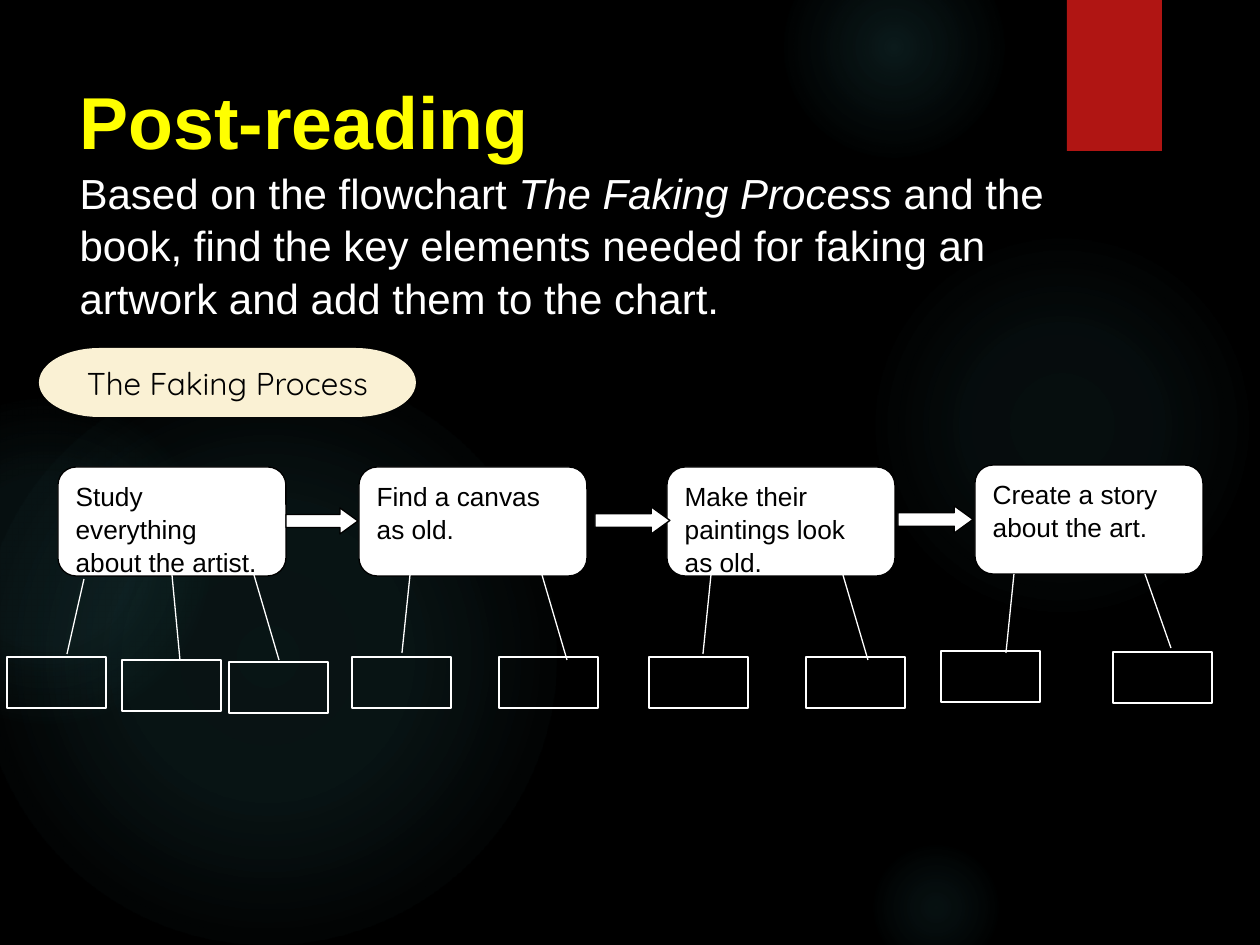
import pptx
import pptx.util
import pptx.dml.color
import pptx.enum.shapes
import pptx.enum.text
import pptx.oxml
import pptx.oxml.ns

RGB = pptx.dml.color.RGBColor
KIND = pptx.enum.shapes.MSO_SHAPE
ALIGN = pptx.enum.text.PP_ALIGN
ANCHOR = pptx.enum.text.MSO_ANCHOR
PX = 914400 / 126

BLACK = RGB(0x00, 0x00, 0x00)
WHITE = RGB(0xFF, 0xFF, 0xFF)
YELLOW = RGB(0xFF, 0xFF, 0x00)
CREAM = RGB(0xFA, 0xF1, 0xD4)
RED = RGB(0xB0, 0x15, 0x13)
TEAL = RGB(0x50, 0xB9, 0xC1)

HEAD = "Post-reading"
TASK = [
    ("Based on the flowchart ", False),
    ("The Faking Process ", True),
    ("and the book, find the key elements needed for faking an ", False),
    ("\n", False),
    ("artwork and add them to the chart.", False),
]
LABEL = "The Faking Process"

# left, top, size, (stop %, alpha %)
GLOWS = [
    (868, 231, 388, [(0, 7), (36, 6), (69, 0)]),
    (784, -63, 220, [(0, 14), (36, 7), (73, 0)]),
    (868, 840, 136, [(0, 9), (36, 5), (66, 0)]),
    (-21, 368, 577, [(0, 11), (36, 10), (75, 0)]),
    (-116, 399, 325, [(0, 8), (36, 8), (72, 0)]),
]
STEPS = [
    ("Study everything about the artist.", 58, 467),
    ("Find a canvas as old.", 359, 467),
    ("Make their paintings look as old.", 667, 467),
    ("Create a story about the art.", 975, 465),
]
ARROWS = [(286, 508, 72, 26), (595, 507, 75, 27), (898, 506, 75, 27)]
LINKS = [
    (84, 579, 67, 654), (172, 575, 180, 660), (254, 575, 279, 660),
    (410, 575, 402, 653), (542, 575, 567, 660), (711, 575, 703, 654),
    (843, 575, 868, 660), (1014, 574, 1006, 653), (1145, 574, 1171, 648),
]
SLOTS = [
    (7, 657), (122, 660), (229, 662), (352, 657), (499, 657),
    (649, 657), (806, 657), (941, 651), (1113, 652),
]


def emu(*nums):
    return [round(n * PX) for n in nums]


def draw(slide, kind, box, fill=None, line=None):
    shape = slide.shapes.add_shape(kind, *emu(*box))
    shape.shadow.inherit = False
    if fill is None:
        shape.fill.background()
    else:
        shape.fill.solid()
        shape.fill.fore_color.rgb = fill
    if line is None:
        shape.line.fill.background()
    else:
        shape.line.color.rgb = line
        shape.line.width = pptx.util.Pt(0.75)
    return shape


def glow(shape, stops):
    marks = "".join(
        f'<a:gs pos="{pos * 1000}"><a:srgbClr val="{TEAL}">'
        f'<a:alpha val="{alpha * 1000}"/></a:srgbClr></a:gs>'
        for pos, alpha in stops
    )
    grad = pptx.oxml.parse_xml(
        f'<a:gradFill {pptx.oxml.ns.nsdecls("a")}><a:gsLst>{marks}</a:gsLst>'
        '<a:path path="circle"><a:fillToRect l="50000" t="50000" '
        'r="50000" b="50000"/></a:path></a:gradFill>'
    )
    props = shape.element.spPr
    props.replace(props.find(pptx.oxml.ns.qn("a:noFill")), grad)


def style(font, name, size, color):
    font.name = name
    font.size = pptx.util.Pt(size)
    font.color.rgb = color


def write(shape, text, name, size, align, anchor):
    frame = shape.text_frame
    frame.word_wrap = True
    frame.vertical_anchor = anchor
    para = frame.paragraphs[0]
    para.text = text
    para.alignment = align
    style(para.font, name, size, BLACK)
    return para


def title(slide):
    shape = slide.shapes.title
    shape.left, shape.top, shape.width, shape.height = emu(67, 63, 1002, 243)
    slide.shapes.element.append(shape.element)
    frame = shape.text_frame
    frame.word_wrap = True
    frame.auto_size = pptx.enum.text.MSO_AUTO_SIZE.NONE
    frame.vertical_anchor = ANCHOR.TOP
    frame.margin_top = emu(9)[0]
    para = frame.paragraphs[0]
    para.alignment = ALIGN.LEFT
    para.line_spacing = 1.05
    run = para.add_run()
    run.text = HEAD
    style(run.font, "Arial", 42, YELLOW)
    run.font.bold = True
    para.add_line_break()
    for text, slant in TASK:
        if text == "\n":
            para.add_line_break()
            continue
        run = para.add_run()
        run.text = text
        style(run.font, "Arial", 24, WHITE)
        run.font.italic = slant


def link(slide, ends):
    line = slide.shapes.add_connector(
        pptx.enum.shapes.MSO_CONNECTOR.STRAIGHT, *emu(*ends))
    line.line.color.rgb = WHITE
    line.line.width = pptx.util.Pt(0.75)
    line.element.spPr.append(pptx.oxml.parse_xml(
        f'<a:effectLst {pptx.oxml.ns.nsdecls("a")}/>'))


def main():
    deck = pptx.Presentation()
    deck.slide_width, deck.slide_height = emu(1260, 945)
    slide = deck.slides.add_slide(deck.slide_layouts[5])
    slide.background.fill.solid()
    slide.background.fill.fore_color.rgb = BLACK

    for left, top, size, stops in GLOWS:
        glow(draw(slide, KIND.OVAL, (left, top, size, size)), stops)
    draw(slide, KIND.RECTANGLE, (1067, 0, 95, 151), RED)
    title(slide)

    label = draw(slide, KIND.FLOWCHART_TERMINATOR, (39, 348, 377, 69), CREAM)
    write(label, LABEL, "Quicksand", 18, ALIGN.CENTER, ANCHOR.MIDDLE)

    for text, left, top in STEPS:
        step = draw(slide, KIND.FLOWCHART_ALTERNATE_PROCESS,
                    (left, top, 228, 109), WHITE, BLACK)
        para = write(step, text, "Arial", 15, ALIGN.LEFT, ANCHOR.TOP)
        para.line_spacing = 1.05
    for box in ARROWS:
        arrow = draw(slide, KIND.RIGHT_ARROW, box, WHITE, BLACK)
        arrow.adjustments[1] = 0.69
    for ends in LINKS:
        link(slide, ends)
    for left, top in SLOTS:
        draw(slide, KIND.RECTANGLE, (left, top, 99, 51), line=WHITE)

    deck.save("out.pptx")


if __name__ == "__main__":
    main()
